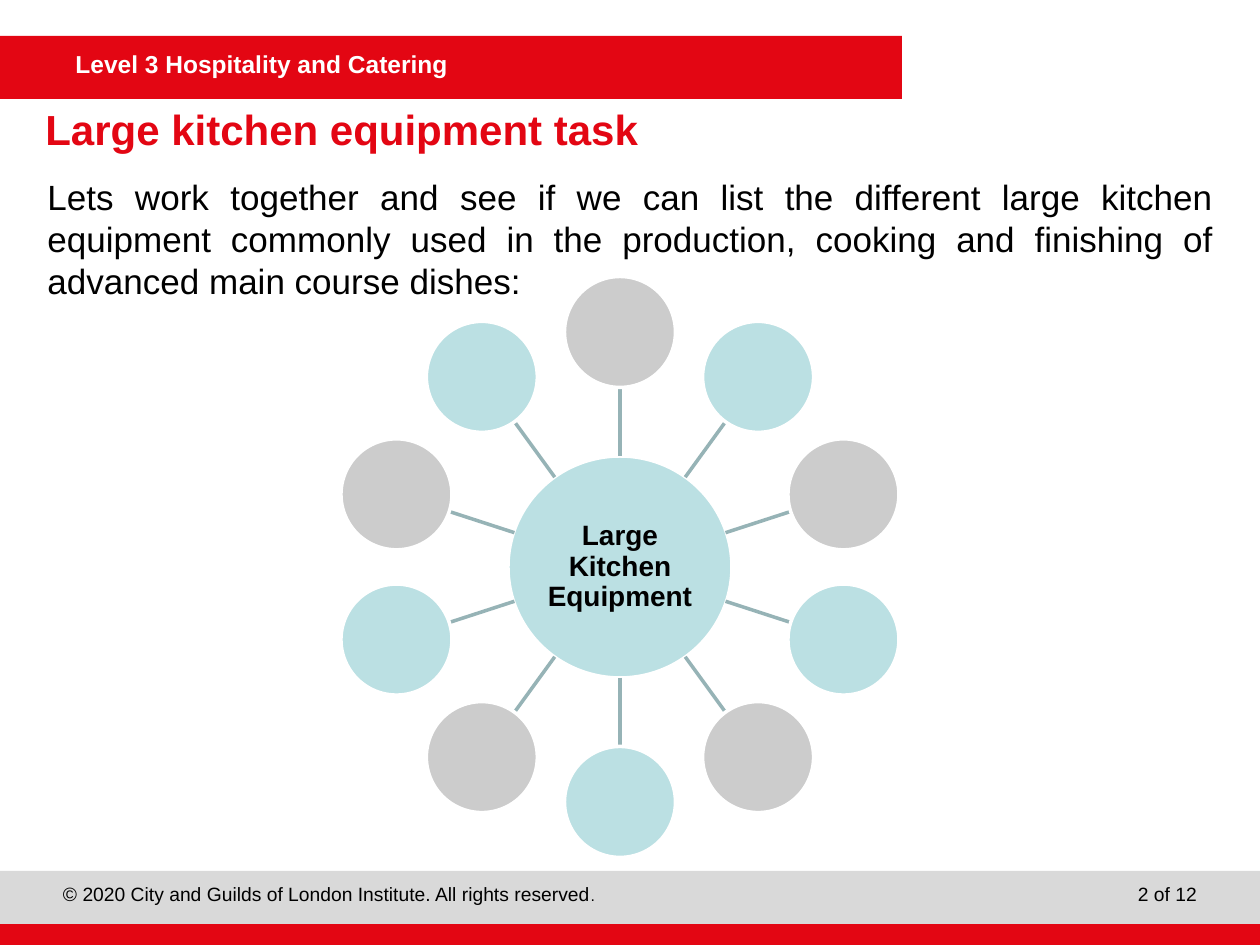
import math

import lxml.etree
import pptx
import pptx.dml.color
import pptx.enum.shapes
import pptx.enum.text
import pptx.oxml.ns
import pptx.util

EMU_PER_PX = 914400 / 126
COLOURS = {
    "red": "E30613",
    "footer": "D9D9D9",
    "aqua": "BBE0E3",
    "grey": "CCCCCC",
    "spoke": "96B3B6",
    "white": "FFFFFF",
    "black": "000000",
}
ALIGN = pptx.enum.text.PP_ALIGN
SHAPES = pptx.enum.shapes.MSO_SHAPE


def px(length):
    return pptx.util.Emu(round(length * EMU_PER_PX))


def colour(name):
    return pptx.dml.color.RGBColor.from_string(COLOURS[name])


def write_run(paragraph, text, size=20, tint="black", bold=False):
    run = paragraph.add_run()
    run.text = text
    run.font.name = "Arial"
    run.font.size = pptx.util.Pt(size)
    run.font.bold = bold
    run.font.color.rgb = colour(tint)


class SlideBuilder:
    """Hold the slide and its style, and draw each kind of element."""

    def __init__(self, slide):
        self.slide = slide

    def shape(self, kind, left, top, width, height, fill, outline=None):
        shape = self.slide.shapes.add_shape(kind, px(left), px(top), px(width), px(height))
        shape.shadow.inherit = False
        shape.fill.solid()
        shape.fill.fore_color.rgb = colour(fill)
        if outline:
            shape.line.color.rgb = colour(outline)
            shape.line.width = pptx.util.Pt(2)
        else:
            shape.line.fill.background()

    def bar(self, left, top, width, height, fill):
        self.shape(SHAPES.RECTANGLE, left, top, width, height, fill)

    def circle(self, centre_x, centre_y, width, height, fill):
        self.shape(SHAPES.OVAL, centre_x - width / 2, centre_y - height / 2,
                   width, height, fill, "white")

    def spoke(self, start, end):
        connector = self.slide.shapes.add_connector(
            pptx.enum.shapes.MSO_CONNECTOR.STRAIGHT, *map(px, start + end))
        connector.line.color.rgb = colour("spoke")
        connector.line.width = pptx.util.Pt(2)
        properties = connector._element.spPr
        lxml.etree.SubElement(properties, pptx.oxml.ns.qn("a:effectLst"))

    def text(self, text, left, top, width, height, align=ALIGN.LEFT, middle=False,
             inset=None, spacing=None, **font):
        box = self.slide.shapes.add_textbox(px(left), px(top), px(width), px(height))
        frame = box.text_frame
        frame.word_wrap = True
        if middle:
            frame.vertical_anchor = pptx.enum.text.MSO_ANCHOR.MIDDLE
        if inset is not None:
            frame.margin_left = frame.margin_right = px(inset)
            frame.margin_top = frame.margin_bottom = px(inset)
        paragraph = frame.paragraphs[0]
        paragraph.alignment = align
        paragraph.line_spacing = spacing
        write_run(paragraph, text, **font)
        return paragraph

    def wheel(self, centre_x, centre_y, count):
        hub_width, hub_height, satellite = 224, 222, 111
        spoke_start, spoke_end, ring = 111, 179, 235
        self.circle(centre_x, centre_y, hub_width, hub_height, "aqua")
        self.text("Large Kitchen Equipment", centre_x - 79, centre_y - 78, 158, 156,
                  align=ALIGN.CENTER, middle=True, inset=1, spacing=0.9,
                  size=16, bold=True)
        for index in range(count):
            angle = math.tau * index / count

            def point(radius):
                return (centre_x + radius * math.sin(angle),
                        centre_y - radius * math.cos(angle))

            self.spoke(point(spoke_start), point(spoke_end))
            self.circle(*point(ring), satellite, satellite,
                        "aqua" if index % 2 else "grey")


def main():
    presentation = pptx.Presentation()
    presentation.slide_width = px(1260)
    presentation.slide_height = px(945)
    slide = presentation.slides.add_slide(presentation.slide_layouts[6])
    builder = SlideBuilder(slide)

    builder.bar(0, 36, 902, 63, "red")
    builder.text("Level 3 Hospitality and Catering", 63, 43, 839, 43,
                 size=14, tint="white", bold=True)
    builder.bar(0, 871, 1260, 53, "footer")
    builder.bar(0, 924, 1260, 21, "red")
    copyright_line = builder.text(
        "© 2020 City and Guilds of London Institute. All rights reserved",
        63, 882, 892, 32, inset=0, size=11)
    write_run(copyright_line, ".", size=9)
    builder.text("2 of 12", 998, 882, 199, 32, align=ALIGN.RIGHT, inset=0, size=11)

    builder.text("Large kitchen equipment task", 33, 102, 1133, 53,
                 middle=True, size=24, tint="red", bold=True)
    body = builder.text(
        "Lets work together and see if we can list the different large kitchen equipment "
        "commonly used in the production, cooking and finishing of advanced main course dishes:",
        35, 169, 1191, 677, align=ALIGN.JUSTIFY, spacing=pptx.util.Pt(24), size=20)
    body.space_after = pptx.util.Pt(10)
    builder.wheel(620, 567, 10)

    presentation.save("out.pptx")


if __name__ == "__main__":
    main()
